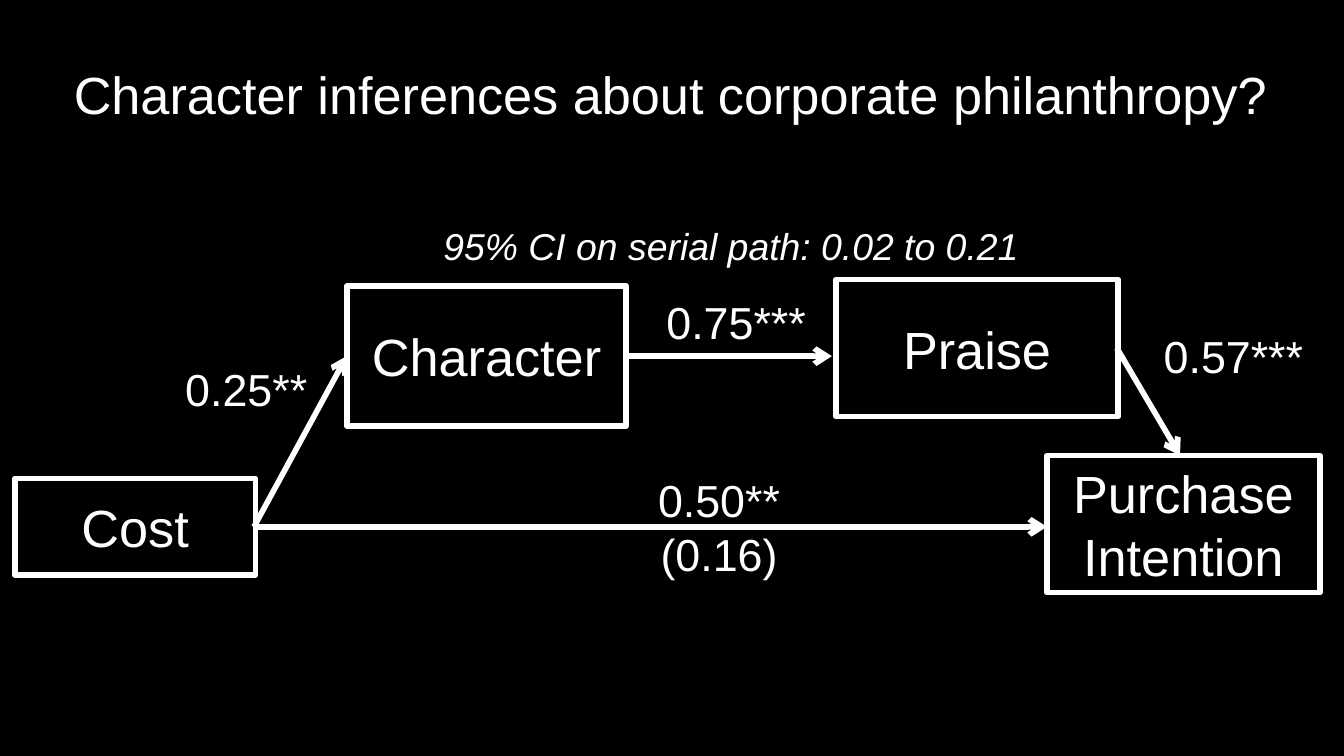
"""Build a path-model slide linking cost, character, praise and purchase intention."""
from lxml import etree
from pptx import Presentation
from pptx import util as u
from pptx.dml.color import RGBColor
from pptx.enum import shapes, text
from pptx.oxml.ns import qn

WHITE, BLACK = "FFFFFF", "000000"


def paint(fmt, color):
    fmt.solid()
    fmt.fore_color.rgb = RGBColor.from_string(color)


def write(sp, words, size, align, anchor, wrap=True, italic=None):
    tf = sp.text_frame
    tf.text = words
    tf.word_wrap = wrap
    tf.vertical_anchor = anchor
    for p in tf.paragraphs:
        p.alignment = align
        for r in p.runs:
            r.font.name, r.font.size, r.font.italic = "Arial", u.Pt(size), italic
            paint(r.font.fill, WHITE)


LEFT, CENTER = text.PP_ALIGN.LEFT, text.PP_ALIGN.CENTER
TOP, MIDDLE = text.MSO_ANCHOR.TOP, text.MSO_ANCHOR.MIDDLE

prs = Presentation()
prs.slide_width = u.Inches(10)
prs.slide_height = prs.slide_width * 9 // 16
s = prs.slides.add_slide(prs.slide_layouts[5])
paint(s.background.fill, BLACK)

title = s.shapes.title
title.left, title.top, title.width, title.height = map(u.Inches, (0.09, 0.23, 9.79, 0.94))
write(title, "Character inferences about corporate philanthropy?", 28, CENTER, MIDDLE)

boxes = {
    "Praise": (6.22, 2.08, 2.1, 1.02),
    "Character": (2.58, 2.13, 2.08, 1.04),
    "Cost": (0.11, 3.56, 1.79, 0.72),
    "Purchase Intention": (7.79, 3.39, 2.03, 1.02),
}
for name, box in boxes.items():
    sp = s.shapes.add_shape(shapes.MSO_SHAPE.RECTANGLE, *map(u.Inches, box))
    sp.shadow.inherit = False
    sp.fill.background()
    paint(sp.line.fill, WHITE)
    sp.line.width = u.Pt(3)
    write(sp, name, 28, CENTER, MIDDLE)

cost_out = (1.89, 3.92)
arrows = [
    ((8.31, 2.59), (8.78, 3.39)),
    (cost_out, (2.58, 2.65)),
    (cost_out, (7.79, 3.92)),
    ((4.66, 2.65), (6.19, 2.65)),
]
for start, end in arrows:
    c = s.shapes.add_connector(shapes.MSO_CONNECTOR.STRAIGHT, *map(u.Inches, start + end))
    paint(c.line.fill, WHITE)
    c.line.width = u.Pt(3)
    etree.SubElement(c.element.spPr.find(qn("a:ln")), qn("a:tailEnd"), type="arrow")
    etree.SubElement(c.element.spPr, qn("a:effectLst"))

labels = [
    ("0.25**", (1.28, 2.64, 1.25, 0.5), 24, LEFT, True, None),
    ("0.57***", (8.56, 2.4, 1.25, 0.5), 24, LEFT, False, None),
    ("95% CI on serial path: 0.02 to 0.21", (3.2, 1.61, 4.51, 0.44), 20, LEFT, False, True),
    ("0.50**\n(0.16)", (4.79, 3.47, 1.12, 0.91), 24, CENTER, False, None),
    ("0.75***", (4.86, 2.14, 1.25, 0.5), 24, LEFT, False, None),
]
for words, box, size, align, wrap, italic in labels:
    sp = s.shapes.add_textbox(*map(u.Inches, box))
    write(sp, words, size, align, TOP, wrap, italic)
    sp.text_frame.auto_size = text.MSO_AUTO_SIZE.SHAPE_TO_FIT_TEXT

prs.save("out.pptx")
